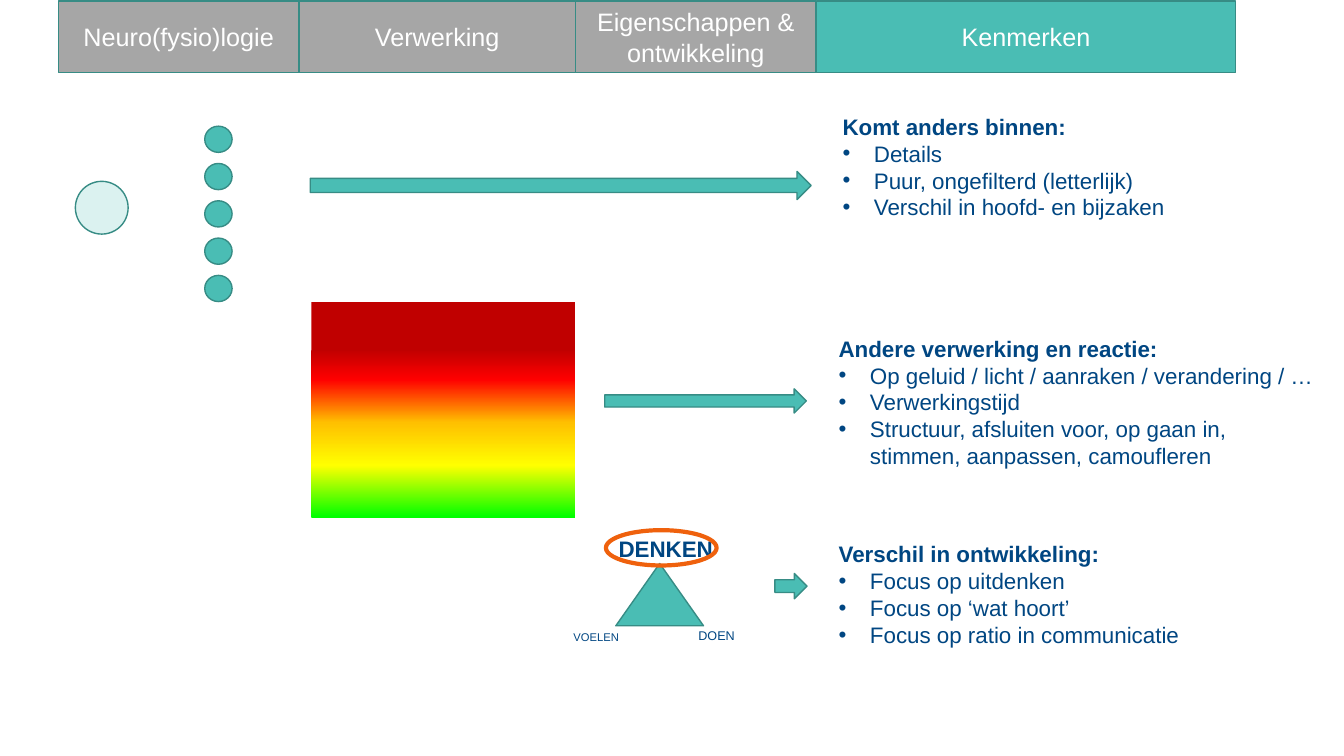
from lxml import etree
from pptx import Presentation
from pptx import util as u
from pptx.dml.color import RGBColor
from pptx.enum import shapes, text
from pptx.oxml.ns import qn

TEAL, EDGE, GREY, NAVY = "4ABDB4", "378C85", "A6A6A6", "004682"
PALE, ORANGE, WHITE = "DBF2F0", "EF610D", "FFFFFF"
KIND = shapes.MSO_SHAPE


def colour(value):
    return RGBColor.from_string(value)


def place(item, box):
    item.left, item.top, item.width, item.height = [u.Cm(length) for length in box]


def paint(shape, fill, edge=EDGE, weight=1):
    if fill:
        shape.fill.solid()
        shape.fill.fore_color.rgb = colour(fill)
    else:
        shape.fill.background()
    shape.line.color.rgb = colour(edge)
    shape.line.width = u.Pt(weight)


def add_figure(page, kind, box, fill=TEAL, edge=EDGE, weight=1):
    shape = page.shapes.add_shape(kind, *[u.Cm(length) for length in box])
    shape.shadow.inherit = False
    paint(shape, fill, edge, weight)
    return shape


def style(para, size, ink, bold=False):
    para.space_before = para.space_after = u.Pt(0)
    para.line_spacing = 1.0
    para.font.name = "Arial"
    para.font.size = u.Pt(size)
    para.font.bold = bold
    para.font.color.rgb = colour(ink)


def write(shape, lines, size, ink, bold=False, align=text.PP_ALIGN.LEFT,
          anchor=text.MSO_ANCHOR.TOP):
    frame = shape.text_frame
    frame.word_wrap = True
    frame.auto_size = text.MSO_AUTO_SIZE.NONE
    frame.vertical_anchor = anchor
    frame.text = lines
    for para in frame.paragraphs:
        para.alignment = align
        style(para, size, ink, bold)


def add_header(page, box):
    left, top, total, height = box
    columns = [("Neuro(fysio)logie", 6.07), ("Verwerking", 6.96),
               ("Eigenschappen &\nontwikkeling", 6.07)]
    for label, width in columns:
        cell = add_figure(page, KIND.RECTANGLE, (left, top, width, height), GREY)
        write(cell, label, 18, WHITE, align=text.PP_ALIGN.CENTER,
              anchor=text.MSO_ANCHOR.MIDDLE)
        left += width
    title = page.shapes.title
    place(title, (left, top, box[0] + total - left, height))
    paint(title, TEAL)
    write(title, "Kenmerken", 18, WHITE, align=text.PP_ALIGN.CENTER,
          anchor=text.MSO_ANCHOR.MIDDLE)


def add_stimuli(page, box):
    left, top, width, height = box
    add_figure(page, KIND.OVAL, (left, top + 1.39, 1.33, 1.33), PALE)
    dot_width, dot_height, count = 0.69, 0.66, 5
    step = (height - dot_height) / (count - 1)
    for row in range(count):
        add_figure(page, KIND.OVAL, (left + width - dot_width, top + row * step,
                                     dot_width, dot_height))


def add_heat_scale(page, box):
    scale = add_figure(page, KIND.RECTANGLE, box)
    scale.line.fill.background()
    scale.fill.gradient()
    scale.fill.gradient_angle = 270
    stops = scale.fill.gradient_stops and scale._element.spPr.find(
        qn("a:gradFill")).find(qn("a:gsLst"))
    for stop in list(stops):
        stops.remove(stop)
    for percent, value in [(0, "C00000"), (22, "C00000"), (36, "FF0000"),
                           (56, "FFC000"), (76, "FFFF00"), (100, "00FF00")]:
        stop = etree.SubElement(stops, qn("a:gs"), pos=str(percent * 1000))
        etree.SubElement(stop, qn("a:srgbClr"), val=value)


def add_triangle(page, box):
    left, top, width, height = box
    add_figure(page, KIND.ISOSCELES_TRIANGLE, (left + 1.32, top + 0.84, 2.21, 1.57))
    labels = [("VOELEN", 0, 2.41, 2.08, 8, False),
              ("DOEN", 3.15, 2.34, 2.08, 9, False),
              ("DENKEN", 1.14, 0, 3, 16, True)]
    for label, across, down, label_width, size, bold in labels:
        caption = page.shapes.add_textbox(u.Cm(left + across), u.Cm(top + down),
                                          u.Cm(label_width), u.Cm(height - 2.41))
        write(caption, label, size, NAVY, bold)
    add_figure(page, KIND.OVAL, (left + 1.07, top, 2.79, 0.89), None, ORANGE, 3)


def add_list(body, box, heading, items):
    place(body, box)
    write(body, heading, 16, NAVY, True)
    first = body.text_frame.paragraphs[0]._p.get_or_add_pPr()
    first.set("marL", "0")
    first.set("indent", "0")
    first.insert_element_before(first.makeelement(qn("a:buNone")), "a:defRPr")
    for item in items:
        para = body.text_frame.add_paragraph()
        para.text = item
        para.alignment = text.PP_ALIGN.LEFT
        para.space_before = para.space_after = u.Pt(0)
        para.line_spacing = 1.0
        properties = para._p.get_or_add_pPr()
        properties.set("marL", str(u.Cm(0.79)))
        properties.set("indent", str(-u.Cm(0.79)))
        etree.SubElement(properties, qn("a:buFont"), typeface="Arial")
        etree.SubElement(properties, qn("a:buChar"), char="•")
        style(para, 16, NAVY)


def main():
    deck = Presentation()
    deck.slide_width, deck.slide_height = u.Cm(33.87), u.Cm(19.05)
    page = deck.slides.add_slide(deck.slide_layouts[4])
    add_header(page, (1.47, 0.03, 29.67, 1.8))
    add_stimuli(page, (1.9, 3.18, 3.95, 4.42))
    add_heat_scale(page, (7.85, 7.62, 6.65, 5.41))
    add_triangle(page, (14.2, 13.36, 5.23, 3.03))
    for box in [(7.82, 4.32, 12.62, 0.71), (15.24, 9.8, 5.08, 0.61),
                (19.53, 14.45, 0.81, 0.64)]:
        add_figure(page, KIND.RIGHT_ARROW, box)
    lists = [
        ((20.98, 2.72, 10.39, 3.68), "Komt anders binnen:",
         ["Details", "Puur, ongefilterd (letterlijk)",
          "Verschil in hoofd- en bijzaken"]),
        ((20.88, 8.31, 12.98, 3.68), "Andere verwerking en reactie:",
         ["Op geluid / licht / aanraken / verandering / …", "Verwerkingstijd",
          "Structuur, afsluiten voor, op gaan in,\vstimmen, aanpassen, camoufleren"]),
        ((20.88, 13.49, 10.39, 3), "Verschil in ontwikkeling:",
         ["Focus op uitdenken", "Focus op ‘wat hoort’",
          "Focus op ratio in communicatie"]),
    ]
    *bodies, spare = list(page.placeholders)[1:]
    for body, (box, heading, items) in zip(bodies, lists):
        add_list(body, box, heading, items)
    spare._element.getparent().remove(spare._element)
    deck.save("out.pptx")


if __name__ == "__main__":
    main()
